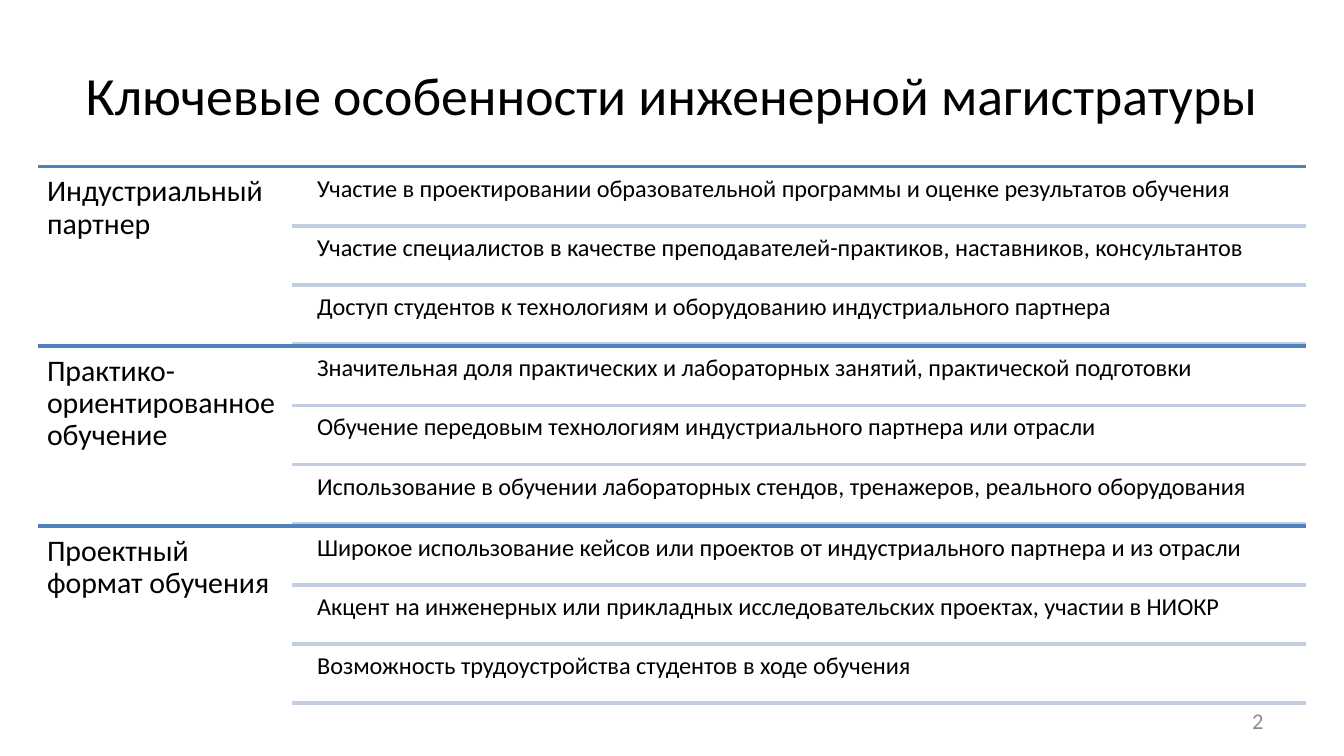
from pptx import Presentation
from pptx.dml.color import RGBColor
from pptx.enum.shapes import MSO_CONNECTOR as Connector
from pptx.enum.text import MSO_ANCHOR as Anchor, PP_ALIGN as Align
from pptx.oxml.ns import qn
from pptx.util import Inches, Pt
from lxml.etree import SubElement

WIDTH = 10
HEIGHT = WIDTH * 9 / 16
LEFT, RIGHT, TOP = 0.28, 9.72, 1.24
SECTION_HEIGHT, ROW_HEIGHT = 4.01 / 3, 0.44
ROW_GAP = ROW_HEIGHT / 20
LABEL_WIDTH, ITEM_INDENT = 1.89, 0.14
BLACK, GRAY, BLUE, PALE_BLUE = "000000", "8C8C8C", "4F81BD", "C2CDE1"

SECTIONS = {
    "Индустриальный партнер": [
        "Участие в проектировании образовательной программы и оценке результатов обучения",
        "Участие специалистов в качестве преподавателей-практиков, наставников, консультантов",
        "Доступ студентов к технологиям и оборудованию индустриального партнера",
    ],
    "Практико-ориентированное обучение": [
        "Значительная доля практических и лабораторных занятий, практической подготовки",
        "Обучение передовым технологиям индустриального партнера или отрасли",
        "Использование в обучении лабораторных стендов, тренажеров, реального оборудования",
    ],
    "Проектный формат обучения": [
        "Широкое использование кейсов или проектов от индустриального партнера и из отрасли",
        "Акцент на инженерных или прикладных исследовательских проектах, участии в НИОКР",
        "Возможность трудоустройства студентов в ходе обучения",
    ],
}


def color(value):
    """Turn a hex string into a colour."""
    return RGBColor.from_string(value)


def set_attributes(target, values):
    """Set each named value on the target."""
    for name, value in values.items():
        setattr(target, name, value)


def add_text(slide, text, box, size, fill=BLACK, inset=None, anchor=Anchor.TOP,
             align=Align.LEFT, spacing=1.0):
    """Add one wrapped paragraph in a box of left, top, width, height."""
    frame = slide.shapes.add_textbox(*map(Inches, box)).text_frame
    set_attributes(frame, {"word_wrap": True, "vertical_anchor": anchor})
    if inset is not None:
        sides = ("left", "top", "right", "bottom")
        set_attributes(frame, {f"margin_{side}": Inches(inset) for side in sides})
    paragraph = frame.paragraphs[0]
    set_attributes(paragraph, {"alignment": align, "line_spacing": spacing})
    run = paragraph.add_run()
    run.text = text
    set_attributes(run.font, {"name": "Calibri", "size": Pt(size)})
    run.font.color.rgb = color(fill)


def add_rule(slide, left, top, stroke):
    """Add a horizontal rule that ends at the right margin."""
    ends = map(Inches, (left, top, RIGHT, top))
    rule = slide.shapes.add_connector(Connector.STRAIGHT, *ends)
    rule.line.width = Pt(2)
    rule.line.color.rgb = color(stroke)
    SubElement(rule._element.spPr, qn("a:effectLst"))


def add_section(slide, top, label, items):
    """Add a labelled section with a rule under each item."""
    add_rule(slide, LEFT, top, BLUE)
    add_text(slide, label, (LEFT, top, LABEL_WIDTH, SECTION_HEIGHT), 16,
             inset=0.07, spacing=0.9)
    item_left = LEFT + LABEL_WIDTH
    text_left = item_left + ITEM_INDENT
    for row, item in enumerate(items):
        row_top = top + ROW_GAP + row * ROW_HEIGHT
        box = (text_left, row_top, RIGHT - text_left, ROW_HEIGHT - ROW_GAP)
        add_text(slide, item, box, 13, inset=0.05, spacing=0.9)
        add_rule(slide, item_left, top + (row + 1) * ROW_HEIGHT, PALE_BLUE)


def main():
    """Build the slide and save it."""
    presentation = Presentation()
    set_attributes(presentation, {"slide_width": Inches(WIDTH),
                                  "slide_height": Inches(HEIGHT)})
    slide = presentation.slides.add_slide(presentation.slide_layouts[6])
    add_text(slide, "Ключевые особенности инженерной магистратуры",
             (0.5, 0.23, 9, 0.94), 28.8, anchor=Anchor.MIDDLE, align=Align.CENTER)
    for index, (label, items) in enumerate(SECTIONS.items()):
        add_section(slide, TOP + index * SECTION_HEIGHT, label, items)
    add_text(slide, "2", (7.17, 5.21, 2.33, 0.3), 12, GRAY,
             anchor=Anchor.MIDDLE, align=Align.RIGHT)
    presentation.save("out.pptx")


if __name__ == "__main__":
    main()
